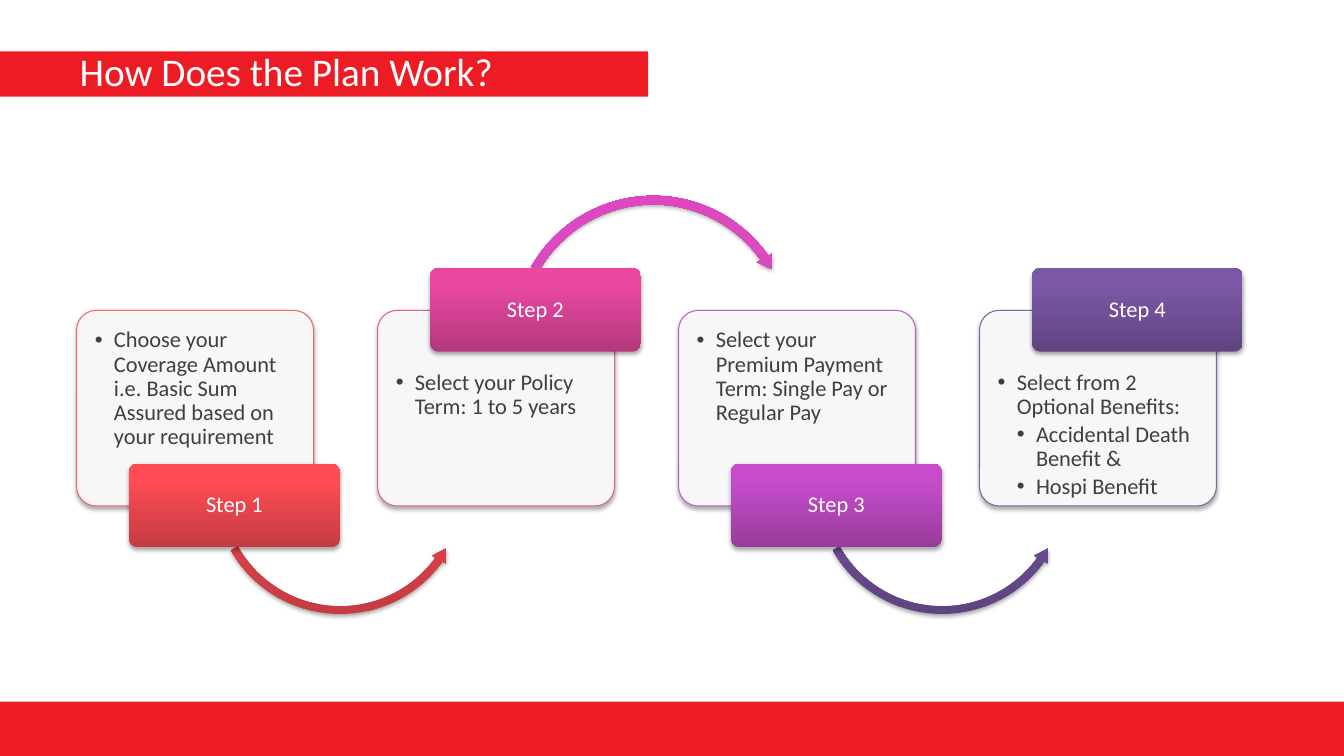
"""Build the slide that explains the four steps of the plan."""
from dataclasses import dataclass

import lxml.etree
import pptx
import pptx.dml.color
import pptx.enum.shapes
import pptx.enum.text
import pptx.oxml
import pptx.oxml.ns
import pptx.util
from pptx.util import Inches

SHAPE = pptx.enum.shapes.MSO_SHAPE
ALIGN = pptx.enum.text.PP_ALIGN
ANCHOR = pptx.enum.text.MSO_ANCHOR
qn = pptx.oxml.ns.qn


@dataclass(frozen=True)
class Theme:
    font: str = "Calibri"
    title_size: float = 28
    text_size: float = 16
    after_bullet: float = 2.6
    brand: str = "ED1C24"
    white: str = "FFFFFF"
    body: str = "3F3F3F"
    shadow: str = "000000"
    red: tuple[str, ...] = ("C53A41", "FF4C55", "FF4E57")
    pink: tuple[str, ...] = ("B3387C", "E948A1", "ED46A2")
    magenta: tuple[str, ...] = ("A93992", "DB4ABE", "DF47C0")
    purple: tuple[str, ...] = ("983B9C", "C54DCB", "C84BCE")
    violet: tuple[str, ...] = ("5F4480", "7B58A6", "7C57A8")
    outlines: tuple[str, ...] = ("F3636A", "DD5EA4", "BE5EC2", "8064A2")


@dataclass(frozen=True)
class Step:
    label: str
    bullets: tuple[tuple[int, str], ...]
    outline: str
    tab: tuple[str, ...]
    arrow: tuple[str, ...] | None


@dataclass(frozen=True)
class Side:
    """Where the tab, list and arrow sit when the tab is above or below its card."""
    tab_top: float
    list_top: float
    arrow_kind: SHAPE
    arrow_offset: float
    arrow_top: float
    arrow_size: float
    arrow_adjustments: tuple[float, ...]


THEME = Theme()
BELOW = Side(4.6, 3.12, SHAPE.LEFT_CIRCULAR_ARROW, 1.33, 3.56, 2.57,
             (0.03, 3.73, 21.49, 90.25, 0.03))
ABOVE = Side(2.66, 3.54, SHAPE.CIRCULAR_ARROW, 1.3, 1.9, 2.87,
             (0.03, 3.31, 194.93, 125.76, 0.03))
STEPS = (
    Step("Step 1", ((1, "Choose your Coverage Amount i.e. Basic Sum Assured based on "
                        "your requirement"),),
         THEME.outlines[0], THEME.red, THEME.red),
    Step("Step 2", ((1, "Select your Policy Term: 1 to 5 years"),),
         THEME.outlines[1], THEME.pink, THEME.magenta),
    Step("Step 3", ((1, "Select your Premium Payment Term: Single Pay or Regular Pay"),),
         THEME.outlines[2], THEME.purple, THEME.violet),
    Step("Step 4", ((1, "Select from 2 Optional Benefits:"),
                    (2, "Accidental Death Benefit &"), (2, "Hospi Benefit")),
         THEME.outlines[3], THEME.violet, None),
)
FIRST_LEFT, PITCH, INDENT = 0.76, 2.985, 0.19


def rgb(value: str) -> pptx.dml.color.RGBColor:
    return pptx.dml.color.RGBColor.from_string(value)


def write(frame, lines, *, size=THEME.text_size, color=THEME.white, align=ALIGN.LEFT,
          anchor=ANCHOR.MIDDLE, insets=(0.03, 0.02), spacing=0.9, after=0.0,
          bulleted=False) -> None:
    """Fill a text frame with (level, text) lines in one format."""
    frame.word_wrap = True
    frame.auto_size = pptx.enum.text.MSO_AUTO_SIZE.NONE
    frame.vertical_anchor = anchor
    frame.margin_left = frame.margin_right = Inches(insets[0])
    frame.margin_top = frame.margin_bottom = Inches(insets[1])
    for index, (level, text) in enumerate(lines):
        paragraph = frame.paragraphs[0] if index == 0 else frame.add_paragraph()
        paragraph.level = level
        paragraph.alignment = align
        paragraph.line_spacing = spacing
        paragraph.space_before = pptx.util.Pt(0)
        paragraph.space_after = pptx.util.Pt(after)
        if bulleted:
            properties = paragraph._p.get_or_add_pPr()
            properties.set("marL", str(Inches(INDENT * level)))
            properties.set("indent", str(Inches(-INDENT)))
            lxml.etree.SubElement(properties, qn("a:buChar"), char="•")
        run = paragraph.add_run()
        run.text = text
        run.font.name = THEME.font
        run.font.size = pptx.util.Pt(size)
        run.font.bold = False
        run.font.color.rgb = rgb(color)


def place(shape, left: float, top: float, width: float, height: float) -> None:
    shape.left, shape.top = Inches(left), Inches(top)
    shape.width, shape.height = Inches(width), Inches(height)


def add_color(parent, value: str, alpha: int | None = None) -> None:
    color = lxml.etree.SubElement(parent, qn("a:srgbClr"), val=value)
    if alpha is not None:
        lxml.etree.SubElement(color, qn("a:alpha"), val=str(alpha * 1000))


def add_plain(slide, kind: SHAPE, box: tuple[float, ...], adjustments=()):
    """Add a shape with no outline and no shadow."""
    shape = slide.shapes.add_shape(kind, *map(Inches, box))
    for index, value in enumerate(adjustments):
        shape.adjustments[index] = value
    shape.line.fill.background()
    shape.shadow.inherit = False
    return shape


def add_bar(slide, box: tuple[float, ...]) -> None:
    bar = add_plain(slide, SHAPE.RECTANGLE, box)
    bar.fill.solid()
    bar.fill.fore_color.rgb = rgb(THEME.brand)


def cast_shadow(shape) -> None:
    effects = shape._element.spPr.find(qn("a:effectLst"))
    shadow = lxml.etree.SubElement(effects, qn("a:outerShdw"), blurRad="40000",
                                   dist="23000", dir="5400000", rotWithShape="0")
    add_color(shadow, THEME.shadow, 35)


def add_glossy(slide, kind: SHAPE, box: tuple[float, ...], colors: tuple[str, ...],
               adjustments: tuple[float, ...]):
    """Add a shadowed shape shaded from the bottom up."""
    shape = add_plain(slide, kind, box, adjustments)
    shape.fill.gradient()
    shape.fill.gradient_angle = 90
    stops = shape._element.spPr.find(".//" + qn("a:gsLst"))
    for stop in list(stops):
        stops.remove(stop)
    for position, value in zip((0, 80, 100), colors):
        add_color(lxml.etree.SubElement(stops, qn("a:gs"), pos=str(position * 1000)), value)
    cast_shadow(shape)
    return shape


def add_card(slide, left: float, outline: str) -> None:
    card = add_plain(slide, SHAPE.ROUNDED_RECTANGLE, (left, 3.08, 2.35, 1.94), (0.1,))
    card.fill.solid()
    card.fill.fore_color.rgb = rgb(THEME.white)
    color = card._element.spPr.find(qn("a:solidFill")).find(qn("a:srgbClr"))
    lxml.etree.SubElement(color, qn("a:alpha"), val="90000")
    card.line.color.rgb = rgb(outline)
    card.line.width = pptx.util.Pt(0.75)
    cast_shadow(card)


def add_step(slide, step: Step, left: float, side: Side, bullet_list) -> None:
    add_card(slide, left, step.outline)
    slide.shapes._spTree.append(bullet_list._element)
    place(bullet_list, left + 0.04, side.list_top, 2.26, 1.44)
    write(bullet_list.text_frame, step.bullets, color=THEME.body, anchor=ANCHOR.TOP,
          insets=(0.14, 0.14), after=THEME.after_bullet, bulleted=True)
    if step.arrow:
        add_glossy(slide, side.arrow_kind,
                   (left + side.arrow_offset, side.arrow_top, side.arrow_size,
                    side.arrow_size), step.arrow, side.arrow_adjustments)
    tab = add_glossy(slide, SHAPE.ROUNDED_RECTANGLE,
                     (left + 0.52, side.tab_top, 2.09, 0.83), step.tab, (0.1,))
    write(tab.text_frame, [(0, step.label)], align=ALIGN.CENTER)


def main() -> None:
    deck = pptx.Presentation()
    deck.slide_width, deck.slide_height = Inches(13.33), Inches(7.5)
    slide = deck.slides.add_slide(deck.slide_layouts.get_by_name("Comparison"))
    title, *bullet_lists = list(slide.placeholders)
    add_bar(slide, (0, 6.96, 13.33, 0.54))
    add_bar(slide, (0, 0.51, 6.43, 0.45))
    slide.shapes._spTree.append(title._element)
    place(title, 0.69, 0.32, 9.36, 0.77)
    write(title.text_frame, [(0, "How Does the Plan Work?")], size=THEME.title_size,
          insets=(0.1, 0.05), spacing=1.0)
    for index, (step, bullet_list) in enumerate(zip(STEPS, bullet_lists)):
        side = ABOVE if index % 2 else BELOW
        add_step(slide, step, FIRST_LEFT + index * PITCH, side, bullet_list)
    deck.save("out.pptx")


if __name__ == "__main__":
    main()
